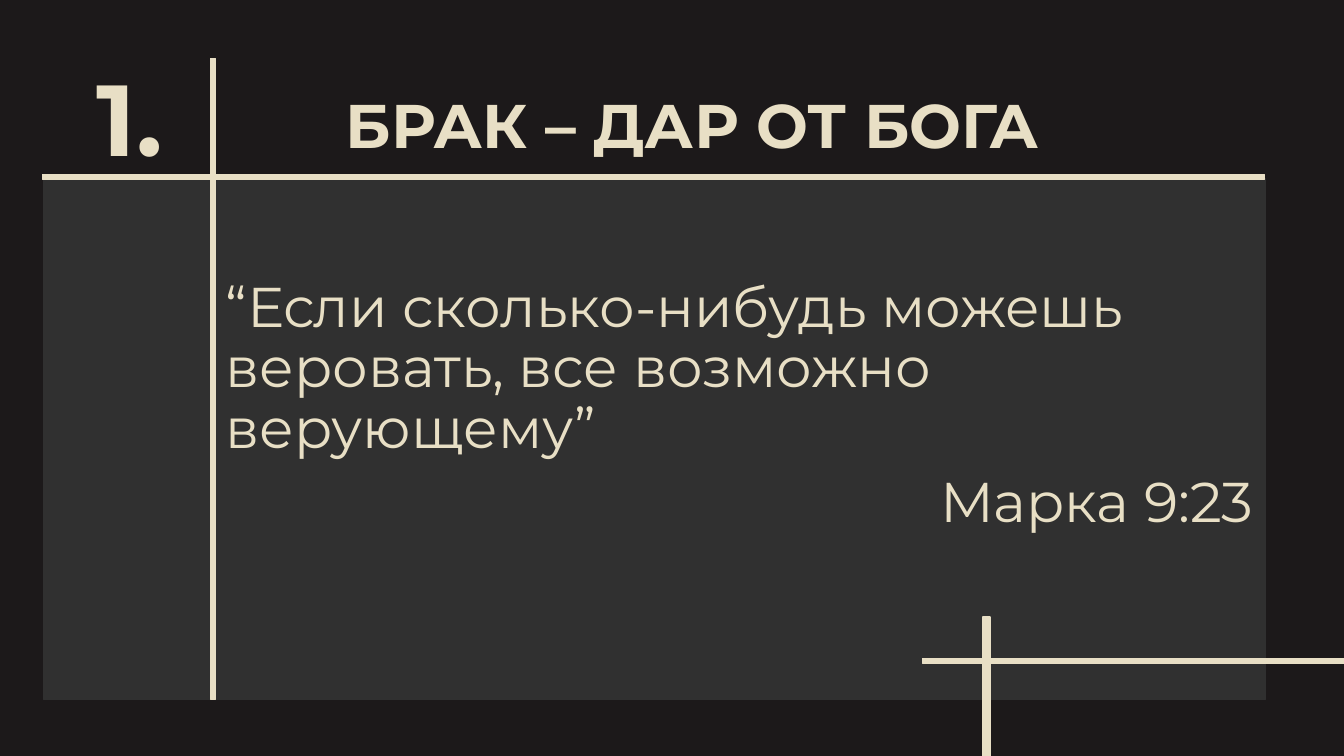
from dataclasses import dataclass

from pptx import Presentation
from pptx.dml.color import RGBColor
from pptx.enum.shapes import MSO_SHAPE as Shape
from pptx.enum.text import MSO_ANCHOR as Anchor, MSO_AUTO_SIZE as AutoSize, PP_ALIGN as Align
from pptx.util import Inches, Pt


@dataclass(frozen=True)
class Theme:
    background: RGBColor = RGBColor(0x1C, 0x19, 0x1A)
    panel: RGBColor = RGBColor(0x30, 0x30, 0x30)
    cream: RGBColor = RGBColor(0xE8, 0xDF, 0xC5)
    font: str = "Montserrat"
    number_size: int = 72
    heading_size: int = 44
    quote_size: int = 40
    line_spacing: float = 0.9
    paragraph_gap: int = 10
    bar: float = 0.05


def apply_format(target, values):
    for name, value in values.items():
        setattr(target, name, value)


class SlideBuilder:
    def __init__(self, presentation, theme):
        self.theme = theme
        self.slide = presentation.slides.add_slide(presentation.slide_layouts[5])
        fill = self.slide.background.fill
        fill.solid()
        fill.fore_color.rgb = theme.background

    def rectangle(self, left, top, width, height, color):
        shape = self.slide.shapes.add_shape(
            Shape.RECTANGLE, *map(Inches, (left, top, width, height)))
        shape.shadow.inherit = False
        shape.fill.solid()
        shape.fill.fore_color.rgb = color
        shape.line.color.rgb = color
        shape.line.width = Pt(1)

    def horizontal_bar(self, left, top, length):
        self.rectangle(left, top, length, self.theme.bar, self.theme.cream)

    def vertical_bar(self, left, top, length, thickness):
        self.rectangle(left, top, thickness, length, self.theme.cream)

    def fill_text(self, shape, box, lines, size, bold=False, anchor=Anchor.MIDDLE):
        """Place the shape and fill it with (text, alignment) lines."""
        position = dict(zip(("left", "top", "width", "height"), map(Inches, box)))
        apply_format(shape, position)
        frame = shape.text_frame
        apply_format(frame, {"word_wrap": True, "auto_size": AutoSize.NONE,
                             "vertical_anchor": anchor})
        for index, (text, alignment) in enumerate(lines):
            paragraph = frame.add_paragraph() if index else frame.paragraphs[0]
            gap = self.theme.paragraph_gap if index else 0
            apply_format(paragraph, {"alignment": alignment, "space_before": Pt(gap),
                                     "line_spacing": self.theme.line_spacing})
            run = paragraph.add_run()
            run.text = text
            apply_format(run.font, {"name": self.theme.font, "size": Pt(size), "bold": bold})
            run.font.color.rgb = self.theme.cream

    def title(self, box, text, size):
        self.fill_text(self.slide.shapes.title, box, [(text, Align.CENTER)], size, bold=True)

    def text(self, box, lines, size, **options):
        shape = self.slide.shapes.add_textbox(*map(Inches, box))
        self.fill_text(shape, box, lines, size, **options)


def main():
    presentation = Presentation()
    apply_format(presentation, {"slide_width": Inches(13.33), "slide_height": Inches(7.5)})
    theme = Theme()
    builder = SlideBuilder(presentation, theme)

    # Panel and quotation
    builder.rectangle(0.43, 1.77, 12.12, 5.17, theme.panel)
    builder.text((2.14, 2.72, 10.39, 3.77), [
        ("“Если сколько-нибудь можешь веровать, все возможно верующему”", Align.LEFT),
        ("Марка 9:23", Align.RIGHT),
    ], theme.quote_size, anchor=Anchor.TOP)

    # Section number and heading
    builder.title((0.45, 0.6, 1.67, 1.26), "1.", theme.number_size)
    builder.text((2.24, 0.55, 9.26, 1.45), [("БРАК – ДАР ОТ БОГА", Align.CENTER)],
                 theme.heading_size, bold=True)

    # Main cross
    builder.vertical_bar(2.09, 0.58, 6.36, theme.bar)
    builder.horizontal_bar(0.42, 1.73, 12.12)

    # Corner cross
    builder.vertical_bar(9.75, 6.12, 1.38, 0.07)
    builder.horizontal_bar(9.15, 6.53, 4.18)

    presentation.save("out.pptx")


if __name__ == "__main__":
    main()
